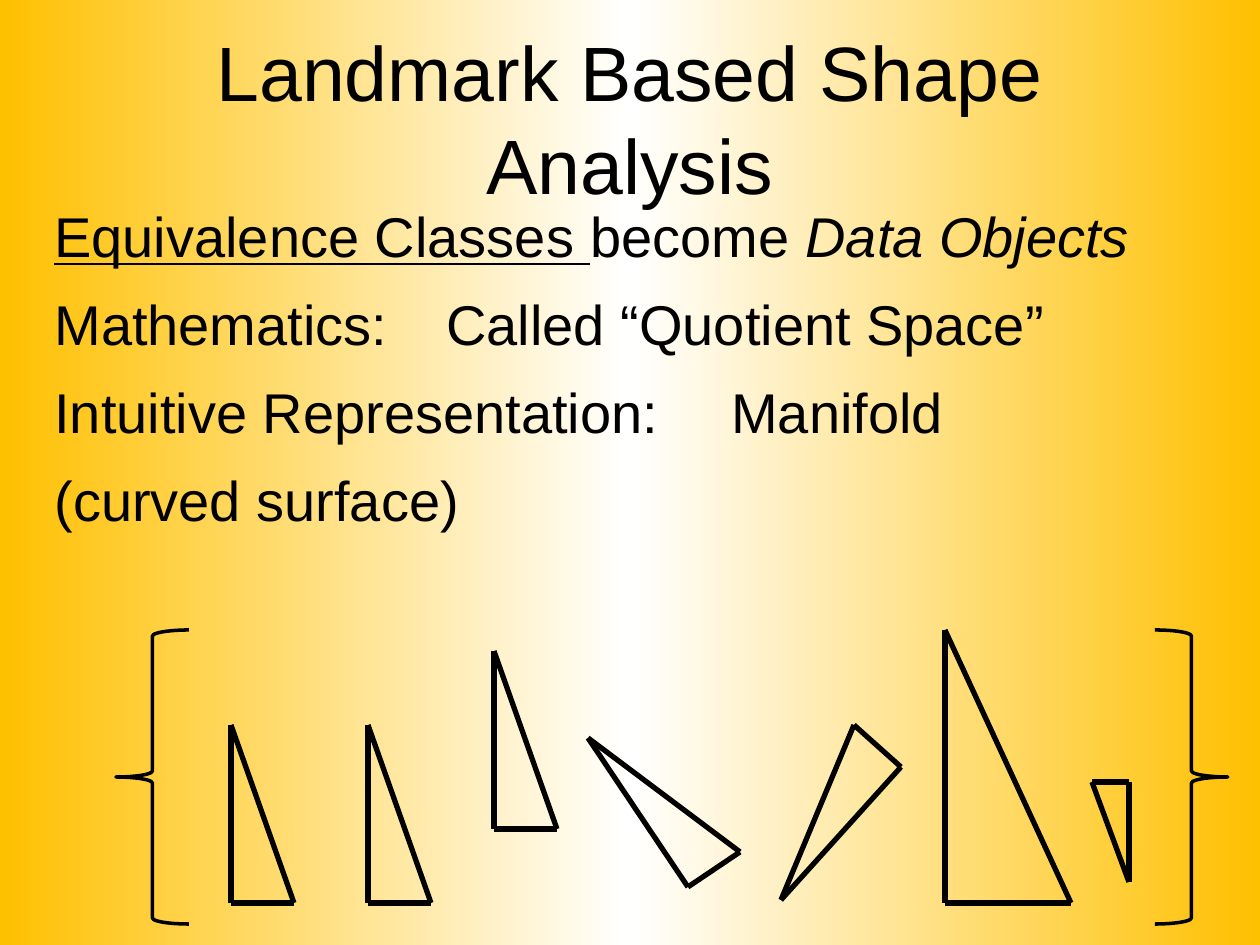
from copy import deepcopy

from pptx import Presentation
from pptx.dml.color import RGBColor
from pptx.enum.shapes import MSO_CONNECTOR, MSO_SHAPE
from pptx.enum.text import MSO_ANCHOR, PP_ALIGN
from pptx.oxml.ns import qn
from pptx.util import Pt

PX = 914400 // 126
BLACK = "000000"


def px(*lengths):
    return [n * PX for n in lengths]


def color(hex_text):
    return RGBColor.from_string(hex_text)


def set_background(s, colors):
    """Fill the slide with a left-to-right gradient of evenly spaced colours."""
    fill = s.background.fill
    fill.gradient()
    fill.gradient_angle = 0
    stops = s.background._cSld.xpath(".//a:gsLst")[0]
    while len(stops) < len(colors):
        stops.append(deepcopy(stops[-1]))
    for i, (stop, hex_text) in enumerate(zip(fill.gradient_stops, colors)):
        stop.position = i / (len(colors) - 1)
        stop.color.rgb = color(hex_text)


def add_textbox(s, box, anchor=MSO_ANCHOR.TOP):
    tf = s.shapes.add_textbox(*px(*box)).text_frame
    tf.word_wrap = True
    tf.vertical_anchor = anchor
    return tf


def add_run(p, text, size, italic=False, underline=False):
    r = p.add_run()
    r.text = text
    r.font.name = "Arial"
    r.font.size = Pt(size)
    r.font.italic = italic
    r.font.underline = underline
    r.font.color.rgb = color(BLACK)


def set_tab(p, position):
    tabs = p._p.get_or_add_pPr().makeelement(qn("a:tabLst"), {})
    tab = tabs.makeelement(qn("a:tab"), {"pos": str(position * PX), "algn": "l"})
    tabs.append(tab)
    p._p.get_or_add_pPr().append(tabs)


def add_title(s, box, text):
    p = add_textbox(s, box, MSO_ANCHOR.MIDDLE).paragraphs[0]
    p.alignment = PP_ALIGN.CENTER
    add_run(p, text, 44)


def add_body(s, box, lines):
    """Each line is a tab position or None, and its runs with their format."""
    tf = add_textbox(s, box)
    for i, (tab, runs) in enumerate(lines):
        p = tf.add_paragraph() if i else tf.paragraphs[0]
        p.line_spacing = 1.1
        p.space_before = Pt(8)
        if tab:
            set_tab(p, tab)
        for text, style in runs:
            add_run(p, text, 32, **style)


def add_line(shapes, start, end):
    line = shapes.add_connector(MSO_CONNECTOR.STRAIGHT, *px(*start, *end))
    line.line.color.rgb = color(BLACK)
    line.line.width = Pt(3)
    sp_pr = line._element.spPr
    sp_pr.append(sp_pr.makeelement(qn("a:effectLst"), {}))


def add_triangle(s, apex, corner, tip):
    group = s.shapes.add_group_shape()
    for start, end in ((apex, corner), (tip, corner), (apex, tip)):
        add_line(group.shapes, start, end)


def add_brace(s, box, rotation=0):
    sp = s.shapes.add_shape(MSO_SHAPE.LEFT_BRACE, *px(*box))
    sp.rotation = rotation
    sp.shadow.inherit = False
    sp.fill.background()
    sp.line.color.rgb = color(BLACK)
    sp.line.width = Pt(2)


def add_equivalence_class(s, box):
    """A set of similar right triangles between braces."""
    left, top, width, height = box
    brace_width = 73
    add_brace(s, (left, top, brace_width, height))
    add_brace(s, (left + width - brace_width, top, brace_width, height), 180)

    shifted = [((x, y), (x, y + 178), (x + 63, y + 178))
               for x, y in ((115, 95), (252, 95), (378, 21))]
    turned_and_scaled = [
        ((472, 108), (572, 257), (624, 222)),
        ((665, 270), (785, 137), (738, 95)),
        ((829, 0), (829, 273), (955, 273)),
        ((1013, 252), (1013, 152), (976, 152)),
    ]
    for triangle in shifted + turned_and_scaled:
        add_triangle(s, *((left + x, top + y) for x, y in triangle))


def main():
    prs = Presentation()
    prs.slide_width, prs.slide_height = px(1260, 945)
    s = prs.slides.add_slide(prs.slide_layouts[6])
    set_background(s, ("FFC000", "FFFFFF", "FFC000"))
    add_title(s, (63, 38, 1134, 158), "Landmark Based Shape Analysis")
    add_body(s, (42, 189, 1160, 714), [
        (None, [("Equivalence Classes ", {"underline": True}),
                ("become ", {}),
                ("Data Objects", {"italic": True})]),
        (392, [("Mathematics:\tCalled “Quotient Space”", {})]),
        (677, [("Intuitive Representation:\tManifold", {})]),
        (None, [("(curved surface)", {})]),
    ])
    add_equivalence_class(s, (116, 630, 1112, 294))
    prs.save("out.pptx")


if __name__ == "__main__":
    main()
